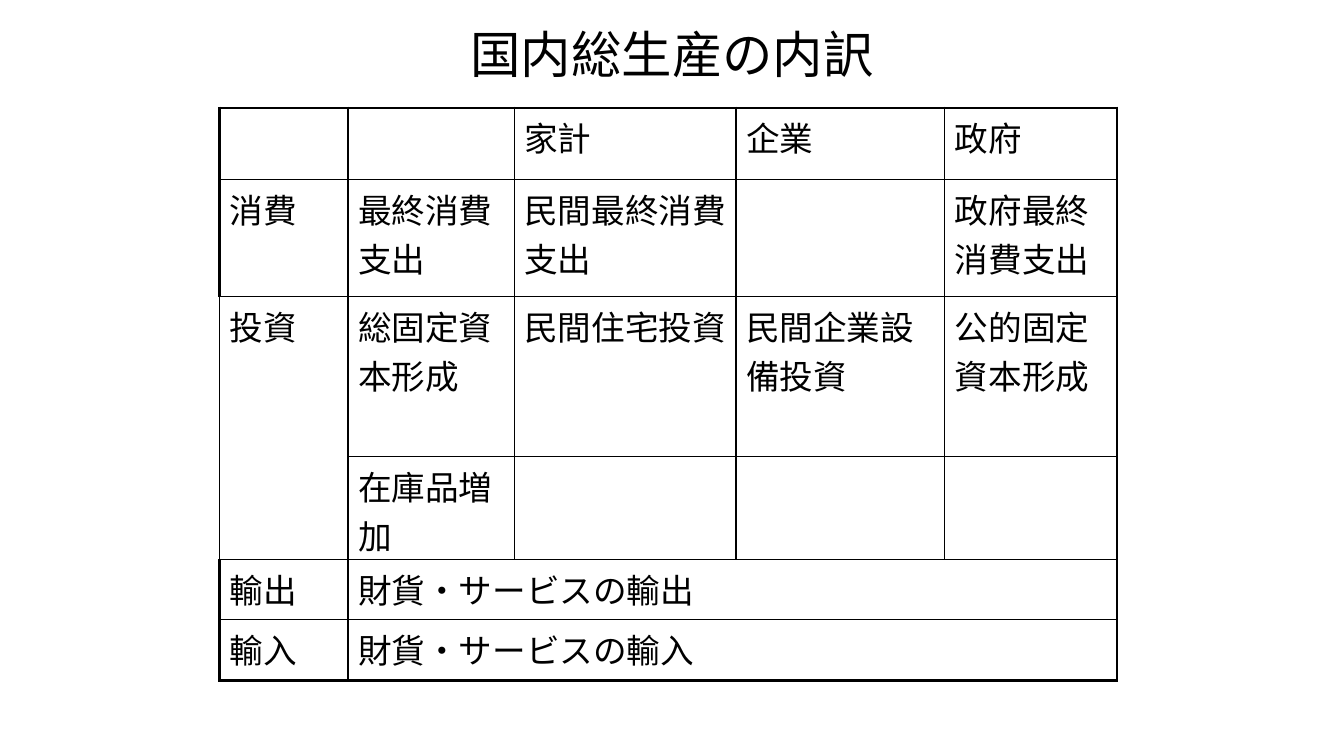
from typing import NamedTuple

from lxml.etree import SubElement
from pptx import Presentation
from pptx.dml.color import RGBColor
from pptx.enum.text import MSO_ANCHOR, PP_ALIGN
from pptx.oxml.ns import qn
from pptx.util import Cm, Pt

INK = "000000"
THIN, THICK = 1, 2.25
COLS = [3.23, 4.19, 5.59, 5.26, 4.34]
LAST = len(COLS) - 1


class Row(NamedTuple):
    high: float
    texts: list[str]
    wide: bool = False  # second cell reaches the right edge
    left: float = THICK
    top: float = THIN
    low: float = THIN


ROWS = [
    Row(1.8, ["", "", "家計", "企業", "政府"], top=THICK),
    Row(2.95, ["消費", "最終消費支出", "民間最終消費支出", "", "政府最終消費支出"]),
    Row(4.04, ["投資", "総固定資本形成", "民間住宅投資", "民間企業設備投資",
               "公的固定資本形成"], left=THIN),
    Row(2.59, ["", "在庫品増加", "", "", ""], left=THIN),
    Row(1.52, ["輸出", "財貨・サービスの輸出"], wide=True),
    Row(1.52, ["輸入", "財貨・サービスの輸入"], wide=True, low=THICK),
]
# Sides left open so that the investment label covers two rows
OPEN = {(2, 0, "B"), (3, 0, "T")}


def color(code: str) -> RGBColor:
    return RGBColor.from_string(code)


def style(para, size: float, font: str) -> None:
    for run in para.runs:
        run.font.size = Pt(size)
        run.font.name = font
        run.font.color.rgb = color(INK)


def border(cell, side: str, width: float) -> None:
    line = SubElement(cell._tc.get_or_add_tcPr(), qn(f"a:ln{side}"), w=str(Pt(width)))
    if width:
        fill = SubElement(line, qn("a:solidFill"))
        SubElement(fill, qn("a:srgbClr"), val=INK)
    else:
        SubElement(line, qn("a:noFill"))


def add_title(slide, text: str) -> None:
    box = slide.shapes.add_textbox(Cm(5.51), Cm(0.76), Cm(22.86), Cm(1.17))
    frame = box.text_frame
    frame.word_wrap = True
    frame.vertical_anchor = MSO_ANCHOR.MIDDLE
    frame.text = text
    para = frame.paragraphs[0]
    para.alignment = PP_ALIGN.CENTER
    style(para, 36, "Calibri")


def add_grid(slide) -> None:
    high = sum(row.high for row in ROWS)
    table = slide.shapes.add_table(len(ROWS), len(COLS), Cm(5.54), Cm(2.72),
                                   Cm(sum(COLS)), Cm(high)).table
    table.first_row = table.horz_banding = False
    for col, wide in zip(table.columns, COLS):
        col.width = Cm(wide)

    for r, row in enumerate(ROWS):
        table.rows[r].height = Cm(row.high)
        if row.wide:
            table.cell(r, 1).merge(table.cell(r, LAST))
        for c in range(len(COLS)):
            cell = table.cell(r, c)
            end = c == LAST or (row.wide and c > 0)
            sides = {"L": THIN if c else row.left, "R": THICK if end else THIN,
                     "T": row.top, "B": row.low}
            for side, width in sides.items():
                border(cell, side, 0 if (r, c, side) in OPEN else width)
            cell.fill.background()
            if c < len(row.texts) and row.texts[c]:
                cell.text_frame.text = row.texts[c]
                style(cell.text_frame.paragraphs[0], 24, "Times New Roman")


def main() -> None:
    deck = Presentation()
    deck.slide_width, deck.slide_height = Cm(33.87), Cm(19.05)
    slide = deck.slides.add_slide(deck.slide_layouts[6])
    add_title(slide, "国内総生産の内訳")
    add_grid(slide)
    deck.save("out.pptx")


if __name__ == "__main__":
    main()
